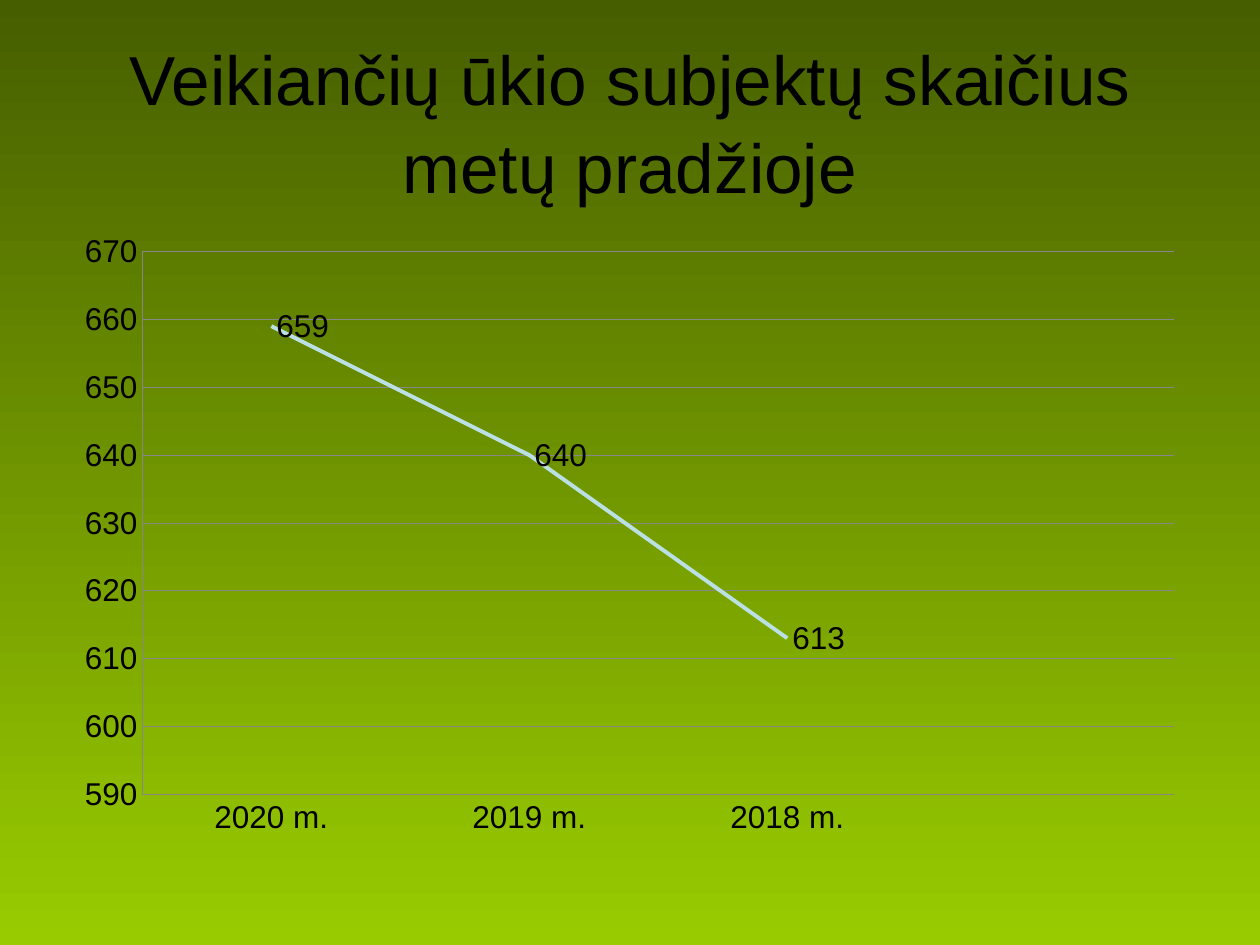
from lxml import etree
from pptx import Presentation
from pptx.chart.data import CategoryChartData
from pptx.dml.color import RGBColor
from pptx.enum.chart import (XL_CHART_TYPE, XL_LABEL_POSITION as LabelPos,
                             XL_MARKER_STYLE, XL_TICK_MARK)
from pptx.enum.text import MSO_ANCHOR, PP_ALIGN
from pptx.util import Inches, Pt

FONT = "Arial"
BLACK = RGBColor(0x00, 0x00, 0x00)
DARK_GREEN = RGBColor(0x46, 0x5E, 0x00)
LIME = RGBColor(0x99, 0xCC, 0x00)
PALE_BLUE = RGBColor(0xBB, 0xE0, 0xE3)
GRAY = RGBColor(0x87, 0x87, 0x87)

YEARS = ["2020 m.", "2019 m.", "2018 m.", ""]
COUNTS = [659, 640, 613, None]


def set_background(s):
    fill = s.background.fill
    fill.gradient()
    fill.gradient_angle = 270  # top to bottom
    for stop, color in zip(fill.gradient_stops, (DARK_GREEN, LIME)):
        stop.color.rgb = color


def set_font(font, size, color=BLACK):
    font.name = FONT
    font.size = Pt(size)
    font.color.rgb = color


def add_text(s, text, left, top, width, height, size=18, align=PP_ALIGN.LEFT,
             anchor=MSO_ANCHOR.TOP, spacing=1.0):
    sp = s.shapes.add_textbox(Inches(left), Inches(top), Inches(width), Inches(height))
    tf = sp.text_frame
    tf.word_wrap = True
    tf.vertical_anchor = anchor
    tf.margin_top = Inches(0.1)
    p = tf.paragraphs[0]
    p.alignment = align
    p.line_spacing = spacing
    r = p.add_run()
    r.text = text
    set_font(r.font, size)


def format_axis(axis):
    axis.major_tick_mark = axis.minor_tick_mark = XL_TICK_MARK.NONE
    axis.format.line.color.rgb = GRAY
    axis.format.line.width = Pt(0.25)


def set_plot_area(chart, **fractions):
    """Fix the inner plot area as fractions of the chart's size."""
    plot_area = chart.plots[0]._element.getparent()
    ns = plot_area.nsmap["c"]
    for old in plot_area.findall(f"{{{ns}}}layout"):
        plot_area.remove(old)
    layout = etree.Element(f"{{{ns}}}layout")
    manual = etree.SubElement(layout, f"{{{ns}}}manualLayout")
    values = dict(layoutTarget="inner", xMode="edge", yMode="edge", **fractions)
    for tag, val in values.items():
        etree.SubElement(manual, f"{{{ns}}}{tag}", val=str(val))
    plot_area.insert(0, layout)


def add_line_chart(s, left, top, width, height):
    data = CategoryChartData()
    data.categories = YEARS
    data.add_series("Series 1", COUNTS)
    chart = s.shapes.add_chart(XL_CHART_TYPE.LINE, Inches(left), Inches(top),
                               Inches(width), Inches(height), data).chart
    chart.has_legend = chart.has_title = False
    set_font(chart.font, 18)
    set_plot_area(chart, x=0.07, y=0.05, w=0.91, h=0.87)

    # Axes
    format_axis(chart.category_axis)
    axis = chart.value_axis
    format_axis(axis)
    axis.minimum_scale, axis.maximum_scale, axis.major_unit = 590, 670, 10
    axis.has_major_gridlines = True
    axis.major_gridlines.format.line.color.rgb = GRAY
    axis.major_gridlines.format.line.width = Pt(0.25)

    # Line and its labels
    plot = chart.plots[0]
    plot.vary_by_categories = False
    series = plot.series[0]
    series.smooth = False
    series.marker.style = XL_MARKER_STYLE.NONE
    series.format.line.color.rgb = PALE_BLUE
    series.format.line.width = Pt(2.25)
    labels = series.data_labels
    labels.show_value = True
    labels.position = LabelPos.RIGHT
    set_font(labels.font, 18)


def main():
    prs = Presentation()
    prs.slide_width, prs.slide_height = Inches(10), Inches(7.5)
    s = prs.slides.add_slide(prs.slide_layouts[6])
    set_background(s)
    add_text(s, "Veikiančių ūkio subjektų skaičius metų pradžioje", 0.5, 0.3, 9, 1.25,
             size=39.6, align=PP_ALIGN.CENTER, anchor=MSO_ANCHOR.MIDDLE, spacing=1.05)
    add_line_chart(s, 0.5, 1.75, 9, 4.95)
    prs.save("out.pptx")


if __name__ == "__main__":
    main()
